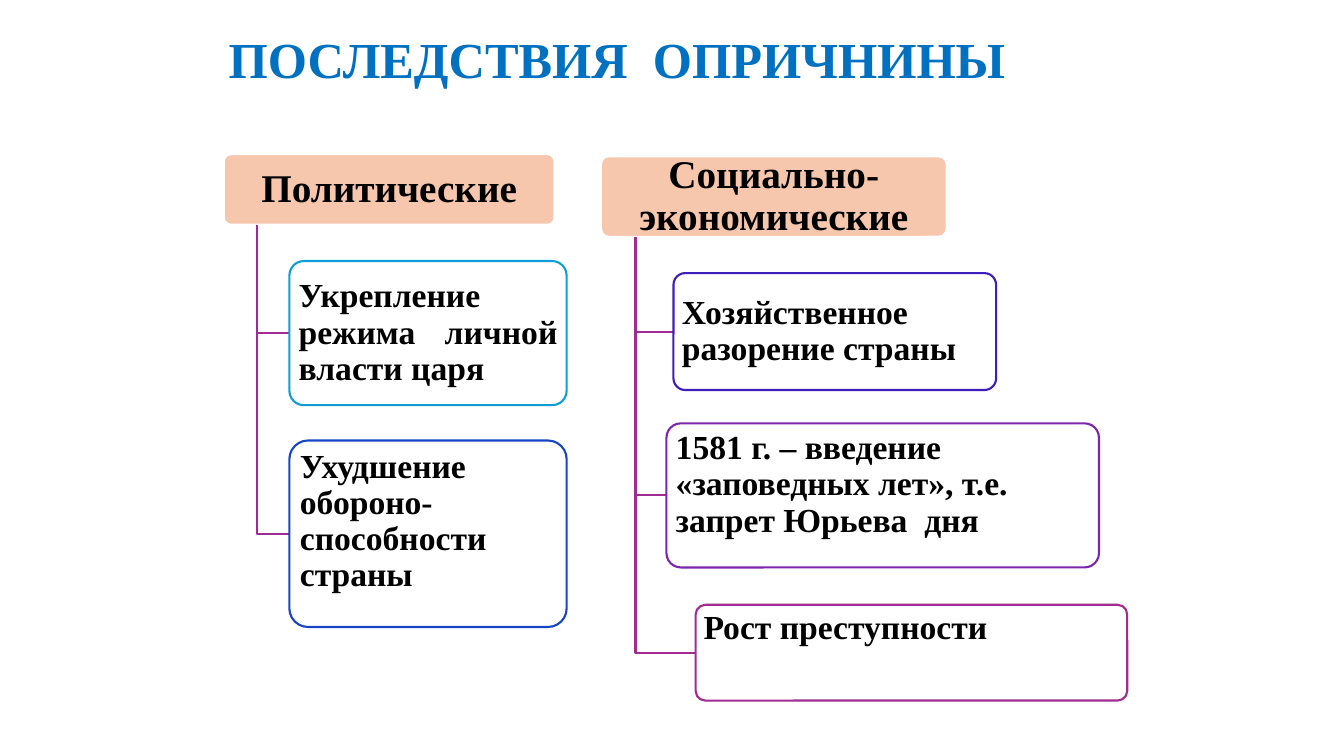
from pptx import Presentation
from pptx.dml.color import RGBColor
from pptx.enum.shapes import MSO_SHAPE
from pptx.enum.text import MSO_ANCHOR, PP_ALIGN
from pptx.util import Inches, Pt

COLORS = {
    "title": "0070C0", "text": "000000", "white": "FFFFFF", "head": "F6C6AD",
    "cyan": "0F9ED5", "blue": "1745C7", "indigo": "3C1EBA",
    "violet": "7D25AD", "plum": "A02B93",
}
MID, TOP = MSO_ANCHOR.MIDDLE, MSO_ANCHOR.TOP
LEFT, CENTER, JUST = PP_ALIGN.LEFT, PP_ALIGN.CENTER, PP_ALIGN.JUSTIFY

# Each branch: heading box and lines, then its items
# Each item: box, outline, anchor, alignment, text
BRANCHES = [
    ((2.22, 1.53, 3.28, 0.7), ["Политические"], [
        ((2.87, 2.59, 2.75, 1.43), "cyan", MID, JUST,
         "Укрепление режима личной власти царя"),
        ((2.87, 4.37, 2.75, 1.85), "blue", TOP, JUST,
         "Ухудшение обороно-способности страны"),
    ]),
    ((5.96, 1.55, 3.43, 0.8), ["Социально-", "экономические"], [
        ((6.68, 2.71, 3.2, 1.16), "indigo", MID, JUST,
         "Хозяйственное разорение страны"),
        ((6.61, 4.2, 4.29, 1.43), "violet", TOP, LEFT,
         "1581 г. – введение «заповедных лет», т.е. запрет Юрьева  дня"),
        ((6.9, 6, 4.28, 0.95), "plum", TOP, LEFT, "Рост преступности"),
    ]),
]

deck = Presentation()
deck.slide_width, deck.slide_height = Inches(13.33), Inches(7.5)
slide = deck.slides.add_slide(deck.slide_layouts[6])
shapes = slide.shapes


def write(frame, lines, size, color, align, anchor):
    frame.word_wrap = True
    frame.vertical_anchor = anchor
    for i, line in enumerate(lines):
        para = frame.paragraphs[0] if i == 0 else frame.add_paragraph()
        para.text = line
        para.alignment = align
        para.line_spacing = 0.9
        font = para.font
        font.name, font.size, font.bold = "Times New Roman", Pt(size), True
        font.color.rgb = RGBColor.from_string(COLORS[color])


def add_card(box, fill, edge, pad):
    """Add a rounded box and return its text frame."""
    card = shapes.add_shape(MSO_SHAPE.ROUNDED_RECTANGLE, *map(Inches, box))
    card.adjustments[0] = 0.1
    card.shadow.inherit = False
    card.fill.solid()
    card.fill.fore_color.rgb = RGBColor.from_string(COLORS[fill])
    card.line.color.rgb = RGBColor.from_string(COLORS[edge])
    card.line.width = Pt(1.5)
    frame = card.text_frame
    frame.margin_left = frame.margin_right = Inches(pad)
    frame.margin_top = frame.margin_bottom = Inches(pad - 0.02)
    return frame


title = shapes.add_textbox(Inches(2.17), Inches(0.3), Inches(8.41), Inches(1.25))
write(title.text_frame, ["ПОСЛЕДСТВИЯ  ОПРИЧНИНЫ"], 36, "title", LEFT, TOP)

for head, lines, items in BRANCHES:
    left, top, width, height = head
    write(add_card(head, "head", "white", 0.06), lines, 28, "text", CENTER, MID)
    trunk, base = Inches(left + width / 10), Inches(top + height)

    for box, edge, anchor, align, text in items:
        side, mid = Inches(box[0]), Inches(box[1] + box[3] / 2)
        path = shapes.build_freeform(trunk, base)
        path.add_line_segments([(trunk, mid), (side, mid)], close=False)
        elbow = path.convert_to_shape()
        elbow.shadow.inherit = False
        elbow.fill.background()
        elbow.line.color.rgb = RGBColor.from_string(COLORS["plum"])
        elbow.line.width = Pt(1.5)
        write(add_card(box, "white", edge, 0.05), [text], 24, "text", align, anchor)

deck.save("out.pptx")
